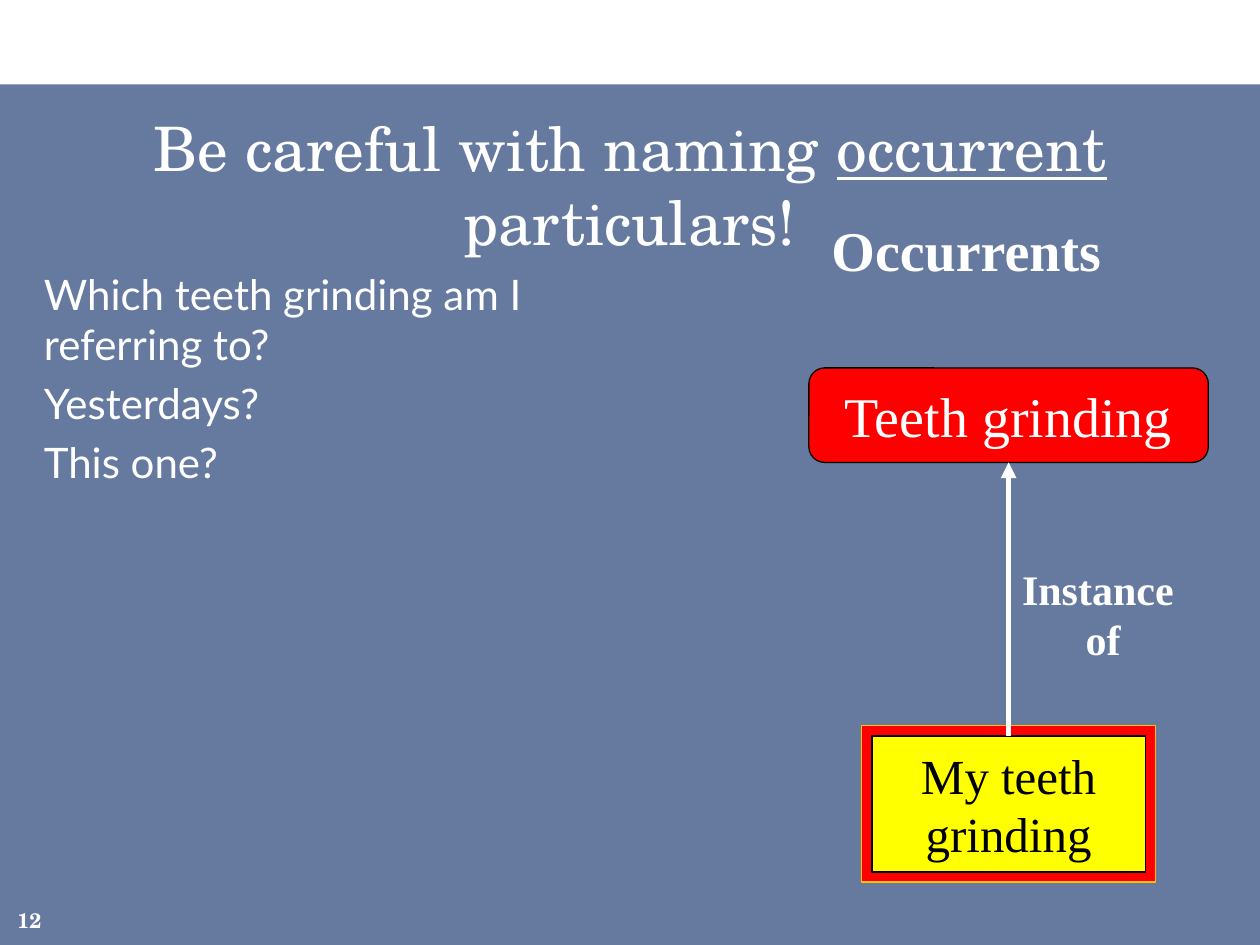
from dataclasses import dataclass

from lxml import etree
from pptx import Presentation
from pptx.dml.color import RGBColor
from pptx.enum.shapes import MSO_CONNECTOR, MSO_SHAPE
from pptx.enum.text import MSO_ANCHOR, PP_ALIGN
from pptx.oxml.ns import qn
from pptx.util import Inches, Pt

RECT, ROUND = MSO_SHAPE.RECTANGLE, MSO_SHAPE.ROUNDED_RECTANGLE
STRAIGHT = MSO_CONNECTOR.STRAIGHT
LEFT, CENTER, RIGHT = PP_ALIGN.LEFT, PP_ALIGN.CENTER, PP_ALIGN.RIGHT
TOP, MIDDLE, BOTTOM = MSO_ANCHOR.TOP, MSO_ANCHOR.MIDDLE, MSO_ANCHOR.BOTTOM
SIDE_TOP, SIDE_BOTTOM = 0, 2


@dataclass(frozen=True)
class Theme:
    white: str = "FFFFFF"
    black: str = "000000"
    navy: str = "002060"
    red: str = "FF0000"
    yellow: str = "FFFF00"
    gold: str = "FFC000"
    head: str = "TeX Gyre Schola"
    body: str = "Lato"
    serif: str = "Times New Roman"
    title: float = 35
    large: float = 32
    item: float = 28
    text: float = 24
    small: float = 12


THEME = Theme()


def add_run(para, text, font, size, color=THEME.white, bold=False, under=False):
    run = para.add_run()
    run.text = text
    run.font.name, run.font.size = font, Pt(size)
    run.font.color.rgb = RGBColor.from_string(color)
    run.font.bold, run.font.underline = bold, under


def add_text(slide, box, anchor=TOP, wrap=True):
    frame = slide.shapes.add_textbox(*map(Inches, box)).text_frame
    frame.word_wrap, frame.vertical_anchor = wrap, anchor
    return frame


def add_lines(frame, lines, align, *style, gap=0, **look):
    """Write one paragraph per line, with a gap in points between them."""
    for i, line in enumerate(lines):
        para = frame.add_paragraph() if i else frame.paragraphs[0]
        para.alignment = align
        if i and gap:
            para.space_before = Pt(gap)
        add_run(para, line, *style, **look)


def add_box(slide, kind, box, fill, line=None):
    shape = slide.shapes.add_shape(kind, *map(Inches, box))
    shape.shadow.inherit = False
    shape.fill.solid()
    shape.fill.fore_color.rgb = RGBColor.from_string(fill)
    if line:
        shape.line.color.rgb = RGBColor.from_string(line)
        shape.line.width = Pt(0.75)
    else:
        shape.line.fill.background()
    shape.text_frame.word_wrap = True
    shape.text_frame.vertical_anchor = MIDDLE
    return shape


def add_arrow(slide, start, end):
    """Join the top of start to the bottom of end."""
    arrow = slide.shapes.add_connector(STRAIGHT, 0, 0, 0, 0)
    arrow.begin_connect(start, SIDE_TOP)
    arrow.end_connect(end, SIDE_BOTTOM)
    arrow.line.color.rgb = RGBColor.from_string(THEME.white)
    arrow.line.width = Pt(3)
    etree.SubElement(arrow.line._get_or_add_ln(), qn("a:tailEnd"), type="triangle")
    etree.SubElement(arrow._element.spPr, qn("a:effectLst"))


def add_panel(slide, box):
    panel = add_box(slide, RECT, box, THEME.navy)
    color = panel._element.spPr.find(".//" + qn("a:srgbClr"))
    etree.SubElement(color, qn("a:alpha"), val="60000")


def add_title(slide, box):
    para = add_text(slide, box).paragraphs[0]
    para.alignment = CENTER
    style = THEME.head, THEME.title
    add_run(para, "Be careful with naming ", *style)
    add_run(para, "occurrent", *style, under=True)
    add_run(para, " particulars!", *style)


def add_body(slide, box):
    lines = ["Which teeth grinding am I referring to?", "Yesterdays?", "This one?"]
    add_lines(add_text(slide, box), lines, LEFT, THEME.body, THEME.text, gap=4.8)


def add_graph(slide, box):
    """Draw the type above its instance, centred in the box."""
    left, top, width, height = box
    mid = left + width / 2

    def place(y, w, h):
        return mid - w / 2, top + y, w, h

    label = add_text(slide, (left + 0.07, top, 2.36, 0.64), wrap=False)
    add_lines(label, ["Occurrents"], CENTER, THEME.serif, THEME.large, bold=True)

    inner_w, inner_h, rim = 2.17, 1.08, 0.08
    base = height - inner_h - rim
    add_box(slide, RECT, place(base - rim, inner_w + 2 * rim, inner_h + 2 * rim),
            THEME.red, THEME.gold)
    item = add_box(slide, RECT, place(base, inner_w, inner_h), THEME.yellow, THEME.black)
    add_lines(item.text_frame, ["My teeth grinding"], CENTER,
              THEME.serif, THEME.item, THEME.black)

    kind = add_box(slide, ROUND, place(1.26, width, 0.75), THEME.red, THEME.black)
    add_lines(kind.text_frame, ["Teeth grinding"], CENTER, THEME.serif, THEME.large)

    add_arrow(slide, item, kind)
    link = add_text(slide, (mid, top + 2.76, 1.5, 0.91), wrap=False)
    add_lines(link, ["Instance ", "of"], CENTER, THEME.serif, THEME.text, bold=True)


def add_number(slide, box):
    frame = add_text(slide, box, BOTTOM)
    frame.margin_left = frame.margin_right = frame.margin_top = frame.margin_bottom = 0
    add_lines(frame, ["12"], RIGHT, THEME.head, THEME.small, bold=True)


def main():
    deck = Presentation()
    deck.slide_width, deck.slide_height = Inches(10), Inches(7.5)
    slide = deck.slides.add_slide(deck.slide_layouts[6])
    add_panel(slide, (0, 0.67, 10, 6.83))
    add_title(slide, (0, 0.83, 10, 0.83))
    add_body(slide, (0.25, 2.08, 5.27, 5.17))
    add_graph(slide, (6.42, 1.66, 3.17, 5.34))
    add_number(slide, (0, 7.08, 0.33, 0.32))
    deck.save("out.pptx")


if __name__ == "__main__":
    main()
